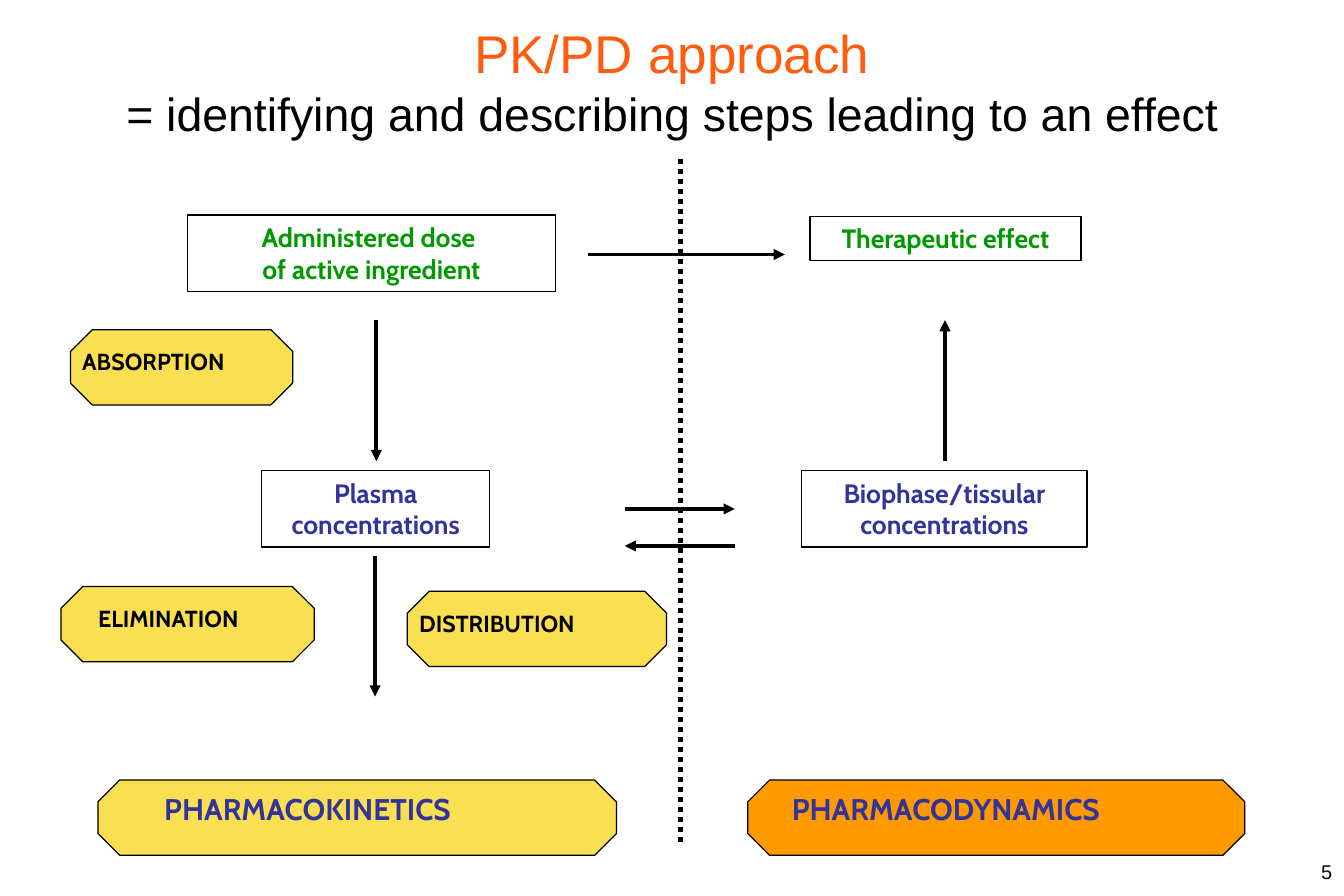
from dataclasses import dataclass

from lxml import etree
from pptx import Presentation
from pptx import util as u
from pptx.dml.color import RGBColor
from pptx.enum import dml, shapes, text
from pptx.oxml.ns import qn

# The grid has square cells, ten to the inch
COLS, ROWS = 112.5, 75
CELL = u.Inches(0.1)

BLACK, WHITE = "000000", "FFFFFF"
BLUE, GREEN, CORAL = "333399", "009900", "FF5D0D"
YELLOW, ORANGE = "FBDF53", "FF9900"
LEFT, MID, RIGHT = text.PP_ALIGN.LEFT, text.PP_ALIGN.CENTER, text.PP_ALIGN.RIGHT


@dataclass
class Box:
    lines: list[str]
    x: float
    y: float
    w: float
    h: float
    color: str
    fill: str | None = None


@dataclass
class Tag:
    label: str
    x: float
    y: float
    w: float
    fill: str
    dx: float  # offset of the label from the octagon
    dy: float
    span: float  # width of the label
    align: text.PP_ALIGN = LEFT
    size: int = 14
    color: str = BLACK


@dataclass
class Arrow:
    x1: float
    y1: float
    x2: float
    y2: float


TAGS = [
    Tag("PHARMACODYNAMICS", 62.6, 65.3, 41.6, ORANGE, 2.7, 0.4, 30.9, LEFT, 18, BLUE),
    Tag("PHARMACOKINETICS", 8.2, 65.3, 43.4, YELLOW, 2.9, 0.4, 29.3, MID, 18, BLUE),
    Tag("ABSORPTION", 5.9, 27.6, 18.6, YELLOW, 0, 1, 15.4),
    Tag("ELIMINATION", 5.1, 49.1, 21.2, YELLOW, 1, 1, 16, MID),
    Tag("DISTRIBUTION", 34.1, 49.5, 21.7, YELLOW, 0, 1, 23),
]
BOXES = [
    Box(["Therapeutic effect"], 67.8, 18.1, 22.7, 3.7, GREEN),
    Box(["Administered dose ", "of active ingredient"], 15.7, 18, 30.8, 6.4, GREEN),
    Box(["Plasma", "concentrations"], 21.9, 39.4, 19.1, 6.4, BLUE, WHITE),
    Box(["Biophase/tissular", "concentrations"], 67.1, 39.4, 23.9, 6.4, BLUE, WHITE),
]
ARROWS = [
    Arrow(49.2, 21.3, 65.7, 21.3),  # dose to effect
    Arrow(31.5, 26.8, 31.5, 38.6),  # dose to plasma
    Arrow(31.4, 46.5, 31.4, 58.3),  # plasma to elimination
    Arrow(52.3, 42.6, 61.5, 42.6),  # plasma to biophase
    Arrow(61.5, 45.7, 52.3, 45.7),  # biophase to plasma
    Arrow(79.1, 38.6, 79.1, 26.8),  # biophase to effect
]


def grid(*cells: float) -> list[int]:
    return [round(c * CELL) for c in cells]


def rgb(code: str) -> RGBColor:
    return RGBColor.from_string(code)


def write(shape, lines: list[str], *, sizes: list[int], colors: list[str],
          font: str = "Cabin", bold: bool = True, align=MID,
          anchor=text.MSO_ANCHOR.TOP) -> None:
    """Put one paragraph per line; the last size and colour carry on."""
    frame = shape.text_frame
    frame.word_wrap = True
    frame.vertical_anchor = anchor
    for i, line in enumerate(lines):
        para = frame.add_paragraph() if i else frame.paragraphs[0]
        para.alignment = align
        run = para.add_run()
        run.text = line
        run.font.name = font
        run.font.bold = bold
        run.font.size = u.Pt(sizes[min(i, len(sizes) - 1)])
        run.font.color.rgb = rgb(colors[min(i, len(colors) - 1)])


def block(slide, kind, area: list[int], fill: str | None):
    shape = slide.shapes.add_shape(kind, *area)
    shape.shadow.inherit = False
    if fill:
        shape.fill.solid()
        shape.fill.fore_color.rgb = rgb(fill)
    else:
        shape.fill.background()
    shape.line.color.rgb = rgb(BLACK)
    shape.line.width = u.Pt(0.75)
    return shape


def draw_tag(slide, tag: Tag) -> None:
    area = grid(tag.x, tag.y, tag.w, 6.3)
    shape = block(slide, shapes.MSO_SHAPE.OCTAGON, area, tag.fill)
    shape.adjustments[0] = 0.29
    spot = grid(tag.x + tag.dx, tag.y + tag.dy, tag.span, 4)
    write(slide.shapes.add_textbox(*spot), [tag.label], sizes=[tag.size],
          colors=[tag.color], align=tag.align)


def draw_box(slide, box: Box) -> None:
    area = grid(box.x, box.y, box.w, box.h)
    shape = block(slide, shapes.MSO_SHAPE.RECTANGLE, area, box.fill)
    write(shape, box.lines, sizes=[16], colors=[box.color])


def draw_line(slide, path: Arrow, width: float, dotted: bool = False) -> None:
    ends = grid(path.x1, path.y1, path.x2, path.y2)
    line = slide.shapes.add_connector(shapes.MSO_CONNECTOR.STRAIGHT, *ends)
    line.line.color.rgb = rgb(BLACK)
    line.line.width = u.Pt(width)
    if dotted:
        line.line.dash_style = dml.MSO_LINE.ROUND_DOT
    else:
        etree.SubElement(line.line._get_or_add_ln(), qn("a:tailEnd"), type="triangle")
    etree.SubElement(line._element.spPr, qn("a:effectLst"))


def main() -> None:
    deck = Presentation()
    deck.slide_width, deck.slide_height = grid(COLS, ROWS)
    slide = deck.slides.add_slide(deck.slide_layouts[6])

    # Title
    write(slide.shapes.add_textbox(*grid(0, 3.1, COLS, 7.3)),
          ["PK/PD approach", "= identifying and describing steps leading to an effect"],
          sizes=[32, 28], colors=[CORAL, BLACK], font="Arial", bold=False,
          anchor=text.MSO_ANCHOR.MIDDLE)

    # Divider between the two halves
    draw_line(slide, Arrow(57, 13.3, 57, 70.8), 3, dotted=True)

    # Diagram
    for tag in TAGS:
        draw_tag(slide, tag)
    for box in BOXES:
        draw_box(slide, box)
    for arrow in ARROWS:
        draw_line(slide, arrow, 2.25)

    # Slide number
    write(slide.shapes.add_textbox(*grid(83.4, 71.5, 29.1, 3.5)), ["5"],
          sizes=[12], colors=[BLACK], font="Arial", bold=False, align=RIGHT)

    deck.save("out.pptx")


if __name__ == "__main__":
    main()
